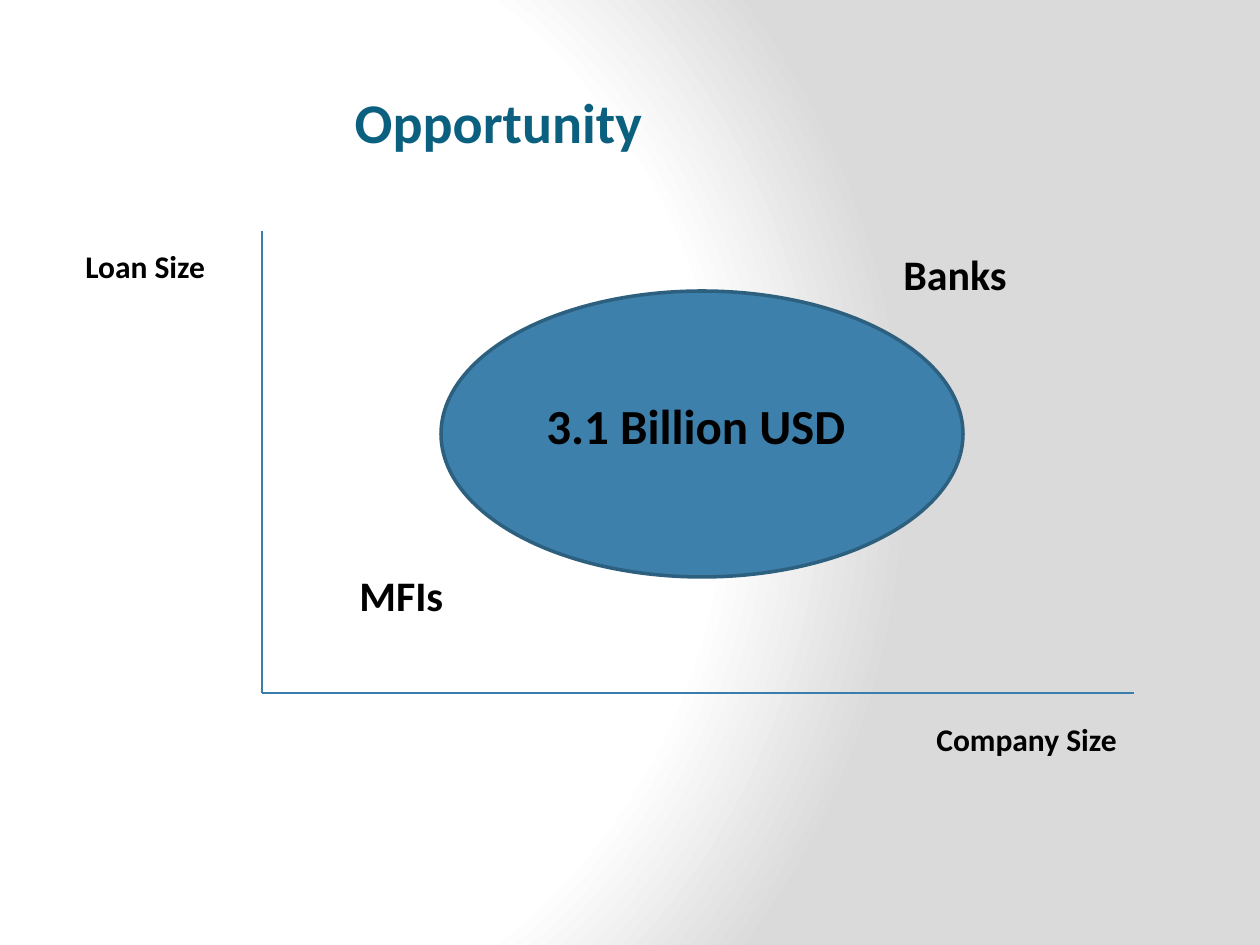
from dataclasses import dataclass

from lxml.etree import SubElement
from pptx import Presentation
from pptx.dml.color import RGBColor
from pptx.enum.shapes import MSO_CONNECTOR, MSO_SHAPE
from pptx.enum.text import MSO_AUTO_SIZE, PP_ALIGN
from pptx.oxml import parse_xml
from pptx.oxml.ns import nsdecls, qn
from pptx.util import Emu, Pt

PX_PER_INCH = 126


@dataclass(frozen=True)
class Theme:
    font: str = "Calibri"
    text: str = "000000"
    title: str = "0B607F"
    axis: str = "397EAB"
    market_fill: str = "3D80AC"
    market_line: str = "2D5F7F"
    title_size: int = 32
    amount_size: int = 28
    lender_size: int = 24
    axis_size: int = 18
    backdrop: tuple = ((0, "FFFFFF"), (75, "FFFFFF"), (100, "DADADA"))


THEME = Theme()


def px(length):
    return Emu(round(length * 914400 / PX_PER_INCH))


def rgb(color):
    return RGBColor.from_string(color)


def set_backdrop(page):
    """Fill the page with a radial gradient centred left of the middle."""
    stops = "".join(
        f'<a:gs pos="{position * 1000}"><a:srgbClr val="{color}"/></a:gs>'
        for position, color in THEME.backdrop
    )
    gradient = parse_xml(
        f'<a:gradFill {nsdecls("a")} rotWithShape="1"><a:gsLst>{stops}</a:gsLst>'
        '<a:path path="circle">'
        '<a:fillToRect l="20000" t="50000" r="100000" b="50000"/>'
        "</a:path></a:gradFill>"
    )
    page.background.fill.background()
    properties = page.element.find(".//" + qn("p:bgPr"))
    properties.replace(properties[0], gradient)


def add_text(page, text, left, top, width, height, *, size,
             color=THEME.text, align=PP_ALIGN.LEFT):
    box = page.shapes.add_textbox(px(left), px(top), px(width), px(height))
    frame = box.text_frame
    frame.word_wrap = True
    frame.auto_size = MSO_AUTO_SIZE.SHAPE_TO_FIT_TEXT
    para = frame.paragraphs[0]
    para.alignment = align
    span = para.add_run()
    span.text = text
    span.font.name = THEME.font
    span.font.size = Pt(size)
    span.font.bold = True
    span.font.color.rgb = rgb(color)


def add_axis(page, start, end):
    axis = page.shapes.add_connector(
        MSO_CONNECTOR.STRAIGHT, *map(px, (*start, *end))
    )
    axis.line.color.rgb = rgb(THEME.axis)
    axis.line.width = Pt(1.5)
    SubElement(axis.element.spPr, qn("a:effectLst"))


def add_market(page, left, top, width, height):
    market = page.shapes.add_shape(
        MSO_SHAPE.OVAL, px(left), px(top), px(width), px(height)
    )
    market.shadow.inherit = False
    market.fill.solid()
    market.fill.fore_color.rgb = rgb(THEME.market_fill)
    market.line.color.rgb = rgb(THEME.market_line)
    market.line.width = Pt(2)


def main():
    deck = Presentation()
    deck.slide_width, deck.slide_height = px(1260), px(945)
    page = deck.slides.add_slide(deck.slide_layouts[6])
    set_backdrop(page)

    add_text(page, "Loan Size", 73, 241, 147, 50, size=THEME.axis_size)
    add_text(page, "Company Size", 924, 714, 231, 50, size=THEME.axis_size)

    corner = (262, 693)
    add_axis(page, (262, 231), corner)
    add_axis(page, (1134, 693), corner)

    add_text(page, "MFIs", 347, 563, 126, 63, size=THEME.lender_size)
    add_text(page, "Banks", 891, 242, 141, 63, size=THEME.lender_size)

    add_market(page, 441, 291, 522, 286)
    add_text(page, "3.1 Billion USD", 534, 389, 357, 72, size=THEME.amount_size)
    add_text(page, "Opportunity", 73, 81, 851, 81, size=THEME.title_size,
             color=THEME.title, align=PP_ALIGN.CENTER)

    deck.save("out.pptx")


if __name__ == "__main__":
    main()
